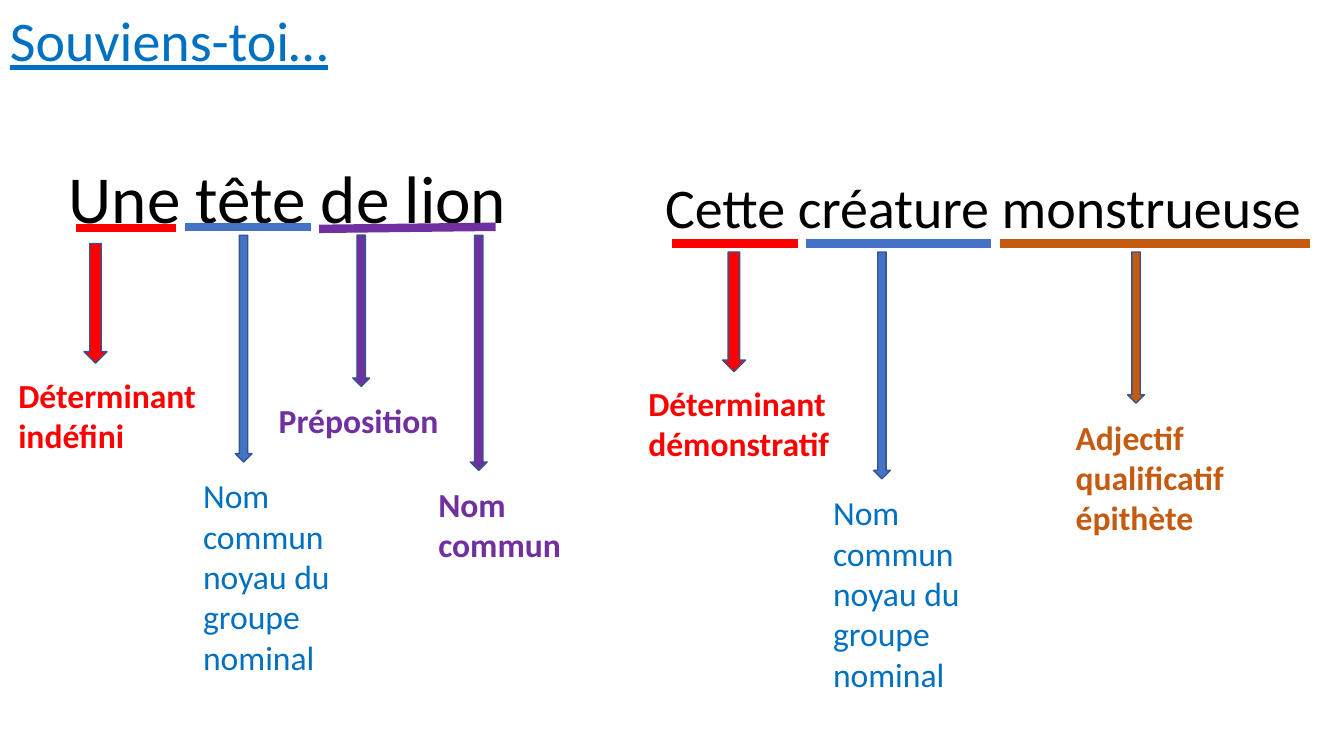
from lxml import etree
from pptx import Presentation
from pptx.dml.color import RGBColor
from pptx.enum.shapes import MSO_CONNECTOR, MSO_SHAPE
from pptx.enum.text import MSO_AUTO_SIZE
from pptx.oxml.ns import qn
from pptx.util import Pt

PX = 9525  # EMU per px, 96 px to the inch
STRAIGHT = MSO_CONNECTOR.STRAIGHT
DOWN_ARROW = MSO_SHAPE.DOWN_ARROW
FIT_SHAPE = MSO_AUTO_SIZE.SHAPE_TO_FIT_TEXT
NO_FIT = MSO_AUTO_SIZE.NONE
FONT = "Calibri"
COLORS = {
    "black": "000000",
    "red": "FF0000",
    "blue": "4472C4",
    "label blue": "0070C0",
    "purple": "7030A0",
    "orange": "C55A11",
    "outline": "325491",
}

# Sentences: text, box, size
SENTENCES = [
    ("Une tête de lion", (56, 144, 752, 87), 48),
    ("Cette créature monstrueuse", (624, 160, 752, 74), 40),
]
# Underlines: start, end, color
UNDERLINES = [
    ((72, 217), (168, 217), "red"),
    ((176, 216), (296, 216), "blue"),
    ((304, 218), (472, 216), "purple"),
    ((640, 232), (760, 232), "red"),
    ((768, 232), (944, 232), "blue"),
    ((952, 232), (1248, 232), "orange"),
]
# Arrows: box, color
ARROWS = [
    ((80, 232, 22, 114), "red"),
    ((224, 224, 16, 216), "blue"),
    ((336, 224, 16, 144), "purple"),
    ((448, 224, 16, 224), "purple"),
    ((688, 240, 22, 114), "red"),
    ((832, 240, 16, 216), "blue"),
    ((1074, 240, 16, 144), "orange"),
]
# Labels: lines, box, color, bold, wrap
NOUN = ["Nom commun noyau du groupe nominal"]
LABELS = [
    (["Déterminant", "indéfini"], (8, 352, 192, 87), "red", True, True),
    (NOUN, (184, 448, 168, 204), "label blue", None, True),
    (["Préposition"], (256, 376, 174, 48), "purple", True, False),
    (["Nom", "commun"], (408, 456, 137, 87), "purple", True, False),
    (["Déterminant", "démonstratif"], (608, 360, 192, 87), "red", True, True),
    (NOUN, (784, 464, 168, 204), "label blue", None, True),
    (["Adjectif", "qualificatif", "épithète"], (1015, 392, 170, 126),
     "orange", True, False),
]


def px(*lengths):
    return [length * PX for length in lengths]


def rgb(name):
    return RGBColor.from_string(COLORS[name])


def add_text(slide, lines, box, size, color, bold=None, wrap=True,
             fit=FIT_SHAPE):
    frame = slide.shapes.add_textbox(*px(*box)).text_frame
    frame.word_wrap = wrap
    frame.auto_size = fit
    frame.text = "\n".join(lines)
    for paragraph in frame.paragraphs:
        font = paragraph.font
        font.name = FONT
        font.size = Pt(size)
        font.bold = bold
        font.color.rgb = rgb(color)
    return frame


def add_underline(slide, start, end, color):
    line = slide.shapes.add_connector(STRAIGHT, *px(*start, *end))
    line.line.color.rgb = rgb(color)
    line.line.width = Pt(6)
    etree.SubElement(line._element.spPr, qn("a:effectLst"))


def add_arrow(slide, box, color):
    arrow = slide.shapes.add_shape(DOWN_ARROW, *px(*box))
    arrow.shadow.inherit = False
    arrow.fill.solid()
    arrow.fill.fore_color.rgb = rgb(color)
    arrow.line.color.rgb = rgb("outline")
    arrow.line.width = Pt(1)


def main():
    presentation = Presentation()
    presentation.slide_width, presentation.slide_height = px(1280, 720)
    slide = presentation.slides.add_slide(presentation.slide_layouts[6])

    # Title
    title = add_text(slide, ["Souviens-toi…"], (0, 8, 448, 112), 40,
                     "label blue", fit=NO_FIT).paragraphs[0]
    title.font.underline = True
    title.line_spacing = 0.9

    # Sentences and their underlined words
    for text, box, size in SENTENCES:
        add_text(slide, [text], box, size, "black")
    for start, end, color in UNDERLINES:
        add_underline(slide, start, end, color)

    # Arrows down to the word classes
    for box, color in ARROWS:
        add_arrow(slide, box, color)
    for lines, box, color, bold, wrap in LABELS:
        add_text(slide, lines, box, 24, color, bold, wrap)

    presentation.save("out.pptx")


if __name__ == "__main__":
    main()
